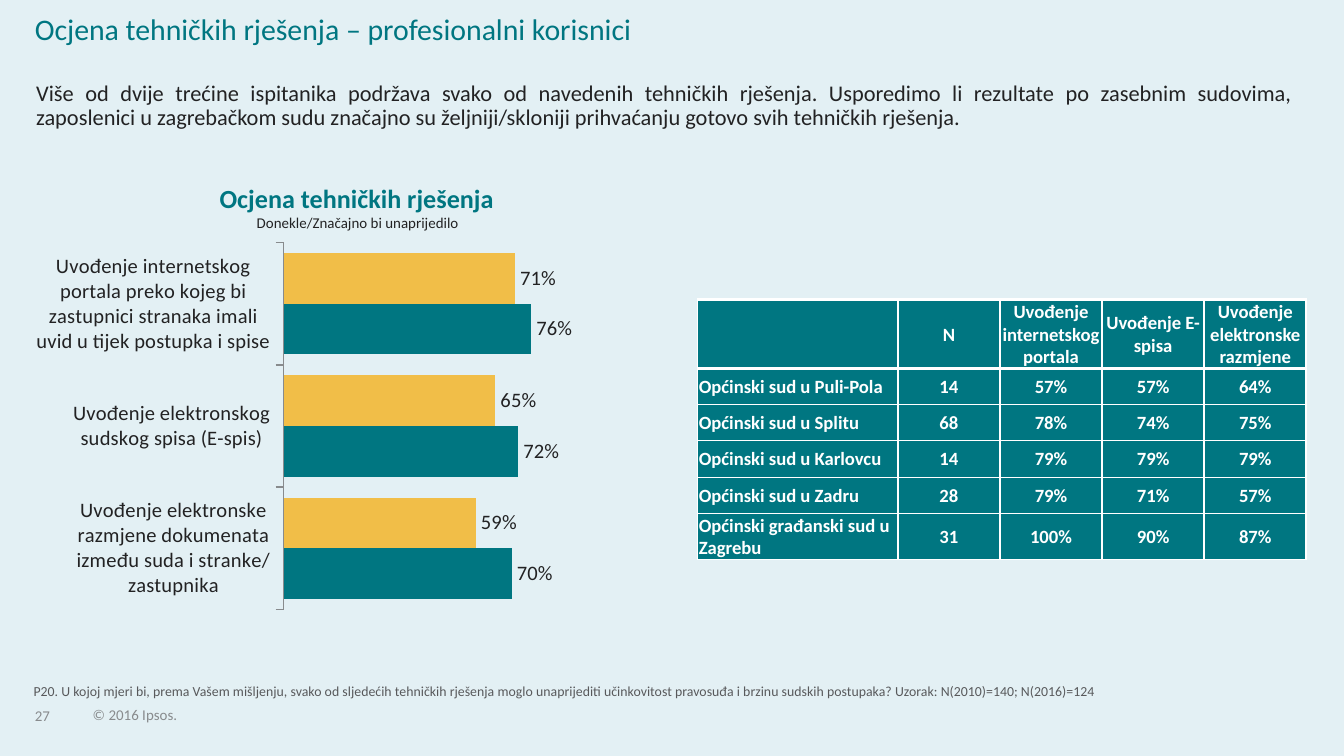
import pptx
import pptx.chart.data
import pptx.dml.color
import pptx.enum.chart
import pptx.enum.text
import pptx.oxml
import pptx.oxml.ns
import pptx.util

Inches, Pt = pptx.util.Inches, pptx.util.Pt
ALIGN = pptx.enum.text.PP_ALIGN
ANCHOR = pptx.enum.text.MSO_ANCHOR
TEAL, GOLD, INK, GRAY, WHITE = "007681", "F1BE48", "222223", "888B8D", "FFFFFF"


def color(code):
    return pptx.dml.color.RGBColor.from_string(code)


def apply(item, values):
    for name, value in values.items():
        setattr(item, name, value)


class Deck:
    font = "Calibri"
    inset = ("margin_left", "margin_top", "margin_right", "margin_bottom")

    def __init__(self, width, height, back):
        self.show = pptx.Presentation()
        apply(self.show, {"slide_width": Inches(width), "slide_height": Inches(height)})
        self.slide = self.show.slides.add_slide(self.show.slide_layouts[6])
        self.slide.background.fill.solid()
        self.slide.background.fill.fore_color.rgb = color(back)

    def style(self, font, size, code, bold=False):
        apply(font, {"name": self.font, "size": Pt(size), "bold": bold})
        font.color.rgb = color(code)

    def text(self, box, words, size, code, bold=False, align=ALIGN.LEFT,
             anchor=ANCHOR.TOP, space=1, pads=(0, 0, 0, 0), wrap=True):
        frame = self.slide.shapes.add_textbox(*map(Inches, box)).text_frame
        apply(frame, {"word_wrap": wrap, "vertical_anchor": anchor})
        apply(frame, dict(zip(self.inset, map(Inches, pads))))
        para = frame.paragraphs[0]
        apply(para, {"text": words, "alignment": align, "line_spacing": space})
        self.style(para.runs[0].font, size, code, bold)

    def border(self, cell, widths):
        props = cell._tc.get_or_add_tcPr()
        for side, width in zip("LRTB", widths):
            props.append(pptx.oxml.parse_xml(
                f'<a:ln{side} {pptx.oxml.ns.nsdecls("a")} w="{Pt(width)}">'
                f'<a:solidFill><a:srgbClr val="{WHITE}"/></a:solidFill></a:ln{side}>'))

    def table(self, box, rows, widths, heights):
        grid = self.slide.shapes.add_table(
            len(rows), len(widths), *map(Inches, box)).table
        for col, width in zip(grid.columns, widths):
            col.width = Inches(width)
        for r, (row, height) in enumerate(zip(rows, heights)):
            grid.rows[r].height = Inches(height)
            for c, words in enumerate(row):
                cell = grid.cell(r, c)
                apply(cell, dict(zip(self.inset, map(Inches, (0.01, 0.01, 0.01, 0)))))
                cell.vertical_anchor = ANCHOR.MIDDLE
                self.border(cell, (1, 1, 1.5 if r < 2 else 0.5, 0.5 if r else 1.5))
                cell.fill.solid()
                cell.fill.fore_color.rgb = color(TEAL)
                para = cell.text_frame.paragraphs[0]
                apply(para, {"text": words,
                             "alignment": ALIGN.CENTER if c or not r else ALIGN.LEFT})
                for run in para.runs:
                    self.style(run.font, 10, WHITE, True)

    def bars(self, box, names, series, plot):
        data = pptx.chart.data.CategoryChartData(number_format="0%")
        data.categories = names
        for name, values, _ in series:
            data.add_series(name, values)
        chart = self.slide.shapes.add_chart(
            pptx.enum.chart.XL_CHART_TYPE.BAR_CLUSTERED, *map(Inches, box), data).chart
        apply(chart, {"has_legend": False, "has_title": False})
        self.style(chart.font, 11, INK)

        # Axes
        apply(chart.value_axis, {"visible": False, "has_major_gridlines": False,
                                 "minimum_scale": 0, "maximum_scale": 1})
        axis = chart.category_axis
        apply(axis, {"reverse_order": True,
                     "major_tick_mark": pptx.enum.chart.XL_TICK_MARK.OUTSIDE})
        axis.format.line.color.rgb = color(GRAY)
        axis.format.line.width = Pt(0.75)

        # Bars and labels
        group = chart.plots[0]
        apply(group, {"gap_width": 42, "overlap": 0, "vary_by_categories": False,
                      "has_data_labels": True})
        apply(group.data_labels, {
            "show_value": True, "number_format": "0%", "number_format_is_linked": False,
            "position": pptx.enum.chart.XL_LABEL_POSITION.OUTSIDE_END})
        self.style(group.data_labels.font, 11, INK)
        for bar, (_, _, code) in zip(group.series, series):
            bar.format.fill.solid()
            bar.format.fill.fore_color.rgb = color(code)

        # Inner plot area
        area = chart._chartSpace.chart.plotArea
        for old in area.findall(pptx.oxml.ns.qn("c:layout")):
            area.remove(old)
        modes = "".join(f'<c:{key}Mode val="edge"/>' for key in "xy")
        sizes = "".join(f'<c:{key} val="{part}"/>' for key, part in zip("xywh", plot))
        area.insert(0, pptx.oxml.parse_xml(
            f'<c:layout {pptx.oxml.ns.nsdecls("c")}><c:manualLayout>'
            f'<c:layoutTarget val="inner"/>{modes}{sizes}</c:manualLayout></c:layout>'))


def main():
    # Widescreen slide, 16 to 9
    deck = Deck(10, 10 * 9 / 16, "E3F0F4")
    low = {"anchor": ANCHOR.BOTTOM}

    # Footer
    foot = {**low, "space": 0.85, "wrap": False}
    deck.text((0.26, 5.13, 0.34, 0.26), "27", 8, GRAY, **foot)
    deck.text((0.69, 5.2, 0.76, 0.18), "© 2016 Ipsos.", 8, GRAY, **foot)
    deck.text((0.25, 5, 8.43, 0.2),
              "P20. U kojoj mjeri bi, prema Vašem mišljenju, svako od sljedećih tehničkih "
              "rješenja moglo unaprijediti učinkovitost pravosuđa i brzinu sudskih postupaka? "
              "Uzorak: N(2010)=140; N(2016)=124", 7.4, "58595B", **low)

    # Title and summary
    deck.text((0.17, 0.56, 9.55, 0.46),
              "Više od dvije trećine ispitanika podržava svako od navedenih tehničkih "
              "rješenja. Usporedimo li rezultate po zasebnim sudovima, zaposlenici u "
              "zagrebačkom sudu značajno su željniji/skloniji prihvaćanju gotovo svih "
              "tehničkih rješenja.", 12, INK, align=ALIGN.JUSTIFY, space=0.9,
              pads=(0.1, 0.05, 0.1, 0.05))
    deck.text((0.26, 0.11, 7.76, 0.54),
              "Ocjena tehničkih rješenja – profesionalni korisnici", 16, TEAL, space=0.9)

    # Results by court
    rows = [
        ("", "N", "Uvođenje internetskog portala", "Uvođenje E-spisa",
         "Uvođenje elektronske razmjene"),
        ("Općinski sud u Puli-Pola", "14", "57%", "57%", "64%"),
        ("Općinski sud u Splitu", "68", "78%", "74%", "75%"),
        ("Općinski sud u Karlovcu", "14", "79%", "79%", "79%"),
        ("Općinski sud u Zadru", "28", "79%", "71%", "57%"),
        ("Općinski građanski sud u Zagrebu", "31", "100%", "90%", "87%"),
    ]
    deck.table((5.19, 2.23, 4.52, 1.93), rows, [1.49] + [0.76] * 4, [0.19] + [0.27] * 5)

    # Chart with its heading
    names = ["Uvođenje internetskog portala preko kojeg bi zastupnici stranaka imali "
             "uvid u tijek postupka i spise",
             "Uvođenje elektronskog sudskog spisa (E-spis)",
             "Uvođenje elektronske razmjene dokumenata između suda i stranke/ zastupnika"]
    series = [("Series 1", (0.71, 0.65, 0.59), GOLD),
              ("Series 2", (0.76, 0.72, 0.7), TEAL)]
    deck.bars((0.27, 1.8, 4.37, 2.74), names, series, (0.42, 0, 5 / 9, 1))
    deck.text((1.17, 1.38, 2.97, 0.41), "Ocjena tehničkih rješenja", 14, TEAL, True,
              align=ALIGN.CENTER, space=0.9)
    deck.text((1.91, 1.57, 1.55, 0.15), "Donekle/Značajno bi unaprijedilo", 8, INK, **low)

    deck.show.save("out.pptx")


if __name__ == "__main__":
    main()
